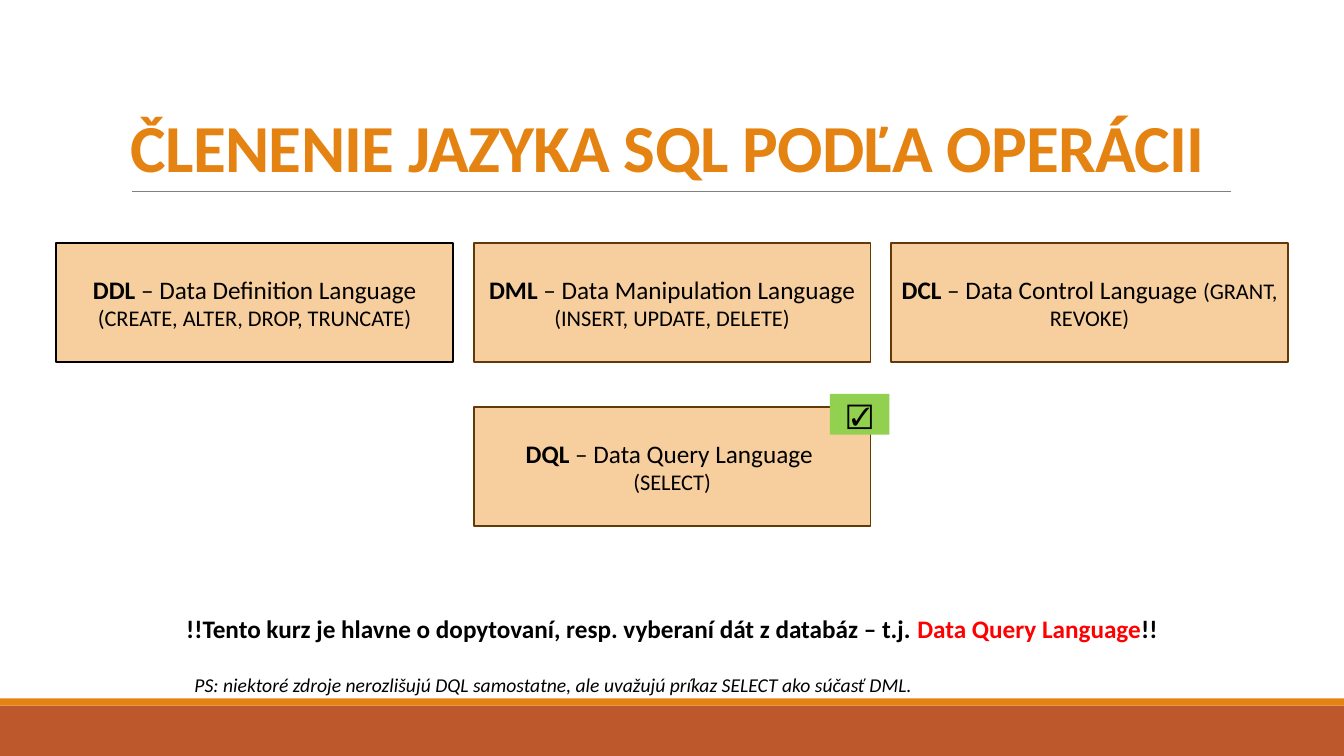
import pptx
import pptx.util
import pptx.dml.color
import pptx.enum.shapes
import pptx.enum.text
import lxml.etree

Pt = pptx.util.Pt
RGBColor = pptx.dml.color.RGBColor
RECT = pptx.enum.shapes.MSO_SHAPE.RECTANGLE
ANCHOR = pptx.enum.text.MSO_ANCHOR
ALIGN = pptx.enum.text.PP_ALIGN

BLACK = RGBColor(0x00, 0x00, 0x00)
RED = RGBColor(0xFF, 0x00, 0x00)
ORANGE = RGBColor(0xE4, 0x83, 0x12)
RUST = RGBColor(0xBD, 0x58, 0x2C)
PEACH = RGBColor(0xF7, 0xCE, 0x9D)
BROWN = RGBColor(0x64, 0x39, 0x08)
GREEN = RGBColor(0x92, 0xD0, 0x50)
GRAY = RGBColor(0x80, 0x80, 0x80)

prs = pptx.Presentation()
prs.slide_width = Pt(960)
prs.slide_height = Pt(540)
s = prs.slides.add_slide(prs.slide_layouts[6])


def add_box(x, y, w, h, fill=None, line=None, anchor=ANCHOR.TOP):
    if fill is None:
        sp = s.shapes.add_textbox(Pt(x), Pt(y), Pt(w), Pt(h))
    else:
        sp = s.shapes.add_shape(RECT, Pt(x), Pt(y), Pt(w), Pt(h))
        sp.shadow.inherit = False
        sp.fill.solid()
        sp.fill.fore_color.rgb = fill
        if line is None:
            sp.line.fill.background()
        else:
            sp.line.color.rgb = line
            sp.line.width = Pt(1.25)
    sp.text_frame.word_wrap = True
    sp.text_frame.vertical_anchor = anchor
    return sp.text_frame


def add_run(p, text, size, bold=False, italic=False, color=BLACK):
    r = p.add_run()
    r.text = text
    r.font.name = "Calibri"
    r.font.size = Pt(size)
    r.font.bold = bold
    r.font.italic = italic
    r.font.color.rgb = color
    return r


add_box(0, 504, 960, 36, RUST)
add_box(0, 498.9, 960, 5.1, ORANGE)

rule = s.shapes.add_connector(
    pptx.enum.shapes.MSO_CONNECTOR.STRAIGHT, Pt(94.3), Pt(136.8), Pt(879), Pt(136.8))
rule.line.color.rgb = GRAY
rule.line.width = Pt(0.5)
lxml.etree.SubElement(rule._element.spPr, pptx.oxml.ns.qn("a:effectLst"))

p = add_box(86.4, 22.3, 792, 114.5, anchor=ANCHOR.BOTTOM).paragraphs[0]
p.line_spacing = 0.85
r = add_run(p, "ČLENENIE JAZYKA SQL PODĽA OPERÁCII", 48, bold=True, color=ORANGE)
r.font._element.set("spc", "-50")

languages = [
    (0, 0, BLACK, "DDL", "Definition", "(CREATE, ALTER, DROP, TRUNCATE)"),
    (1, 0, BROWN, "DML", "Manipulation", "(INSERT, UPDATE, DELETE)"),
    (2, 0, BROWN, "DCL", "Control", "(GRANT, REVOKE)"),
    (1, 1, BROWN, "DQL", "Query", "(SELECT)"),
]
for col, row, line, code, kind, commands in languages:
    tf = add_box(40.2 + 298.2 * col, 173.5 + 117.2 * row, 283.4, 85,
                 PEACH, line, ANCHOR.MIDDLE)
    p = tf.paragraphs[0]
    p.alignment = ALIGN.CENTER
    add_run(p, code, 18, bold=True)
    add_run(p, f" – Data {kind} Language ", 18)
    if row == 1:
        p = tf.add_paragraph()
        p.alignment = ALIGN.CENTER
    add_run(p, commands, 16)

p = add_box(592.8, 281.4, 42.5, 29.1, GREEN).paragraphs[0]
p.alignment = ALIGN.CENTER
add_run(p, "☑", 18)

p = add_box(115.2, 434.4, 729.4, 29.1).paragraphs[0]
p.alignment = ALIGN.CENTER
add_run(p, "!!Tento kurz je hlavne o dopytovaní, resp. vyberaní dát z databáz – t.j. ", 18, bold=True)
add_run(p, "Data Query Language", 18, bold=True, color=RED)
add_run(p, "!!", 18, bold=True)

p = add_box(131.8, 476.8, 638.6, 24.2).paragraphs[0]
add_run(p, "PS: niektoré zdroje nerozlišujú DQL samostatne, ale uvažujú príkaz SELECT ako súčasť DML.",
        14, italic=True)

prs.save("out.pptx")
